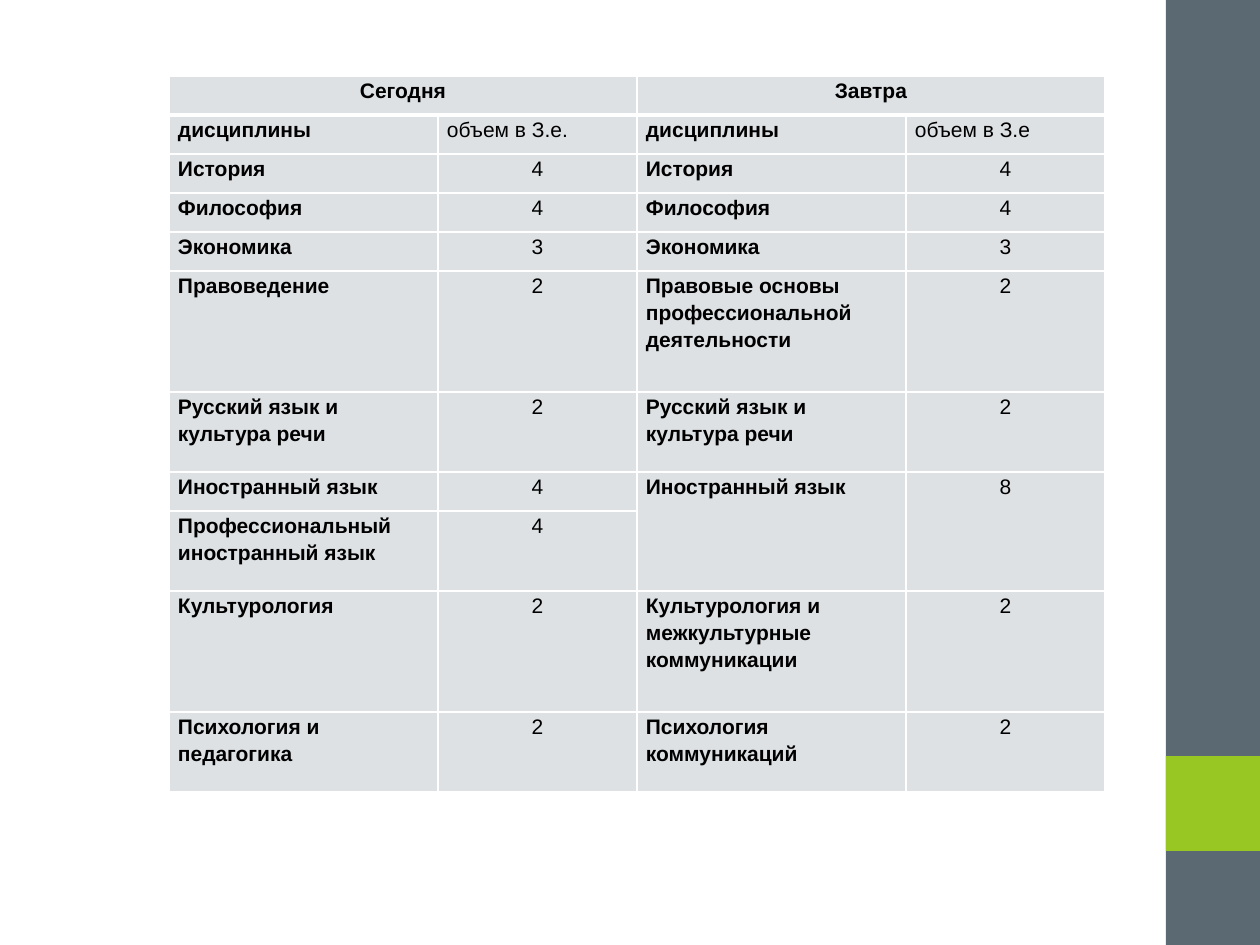
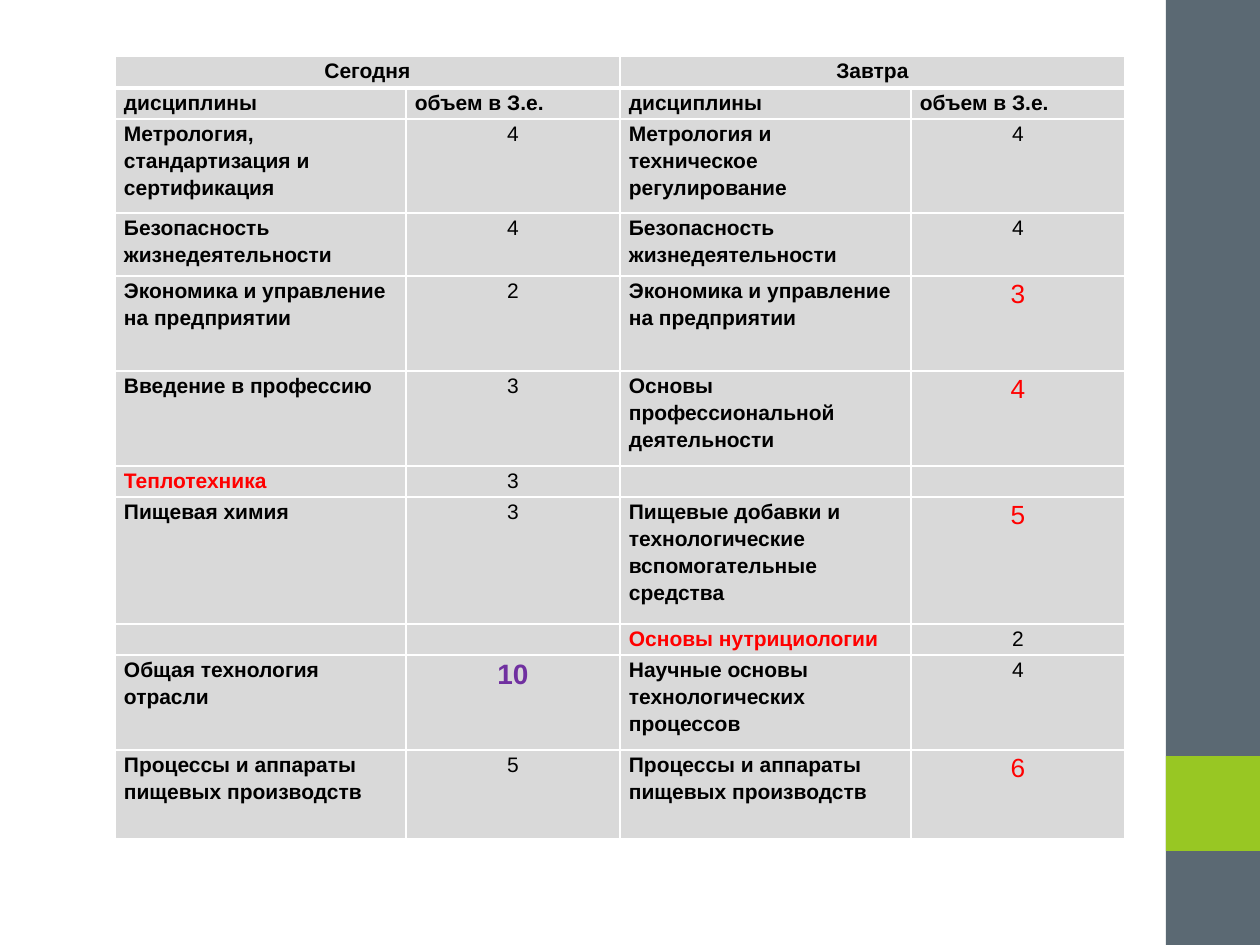
from lxml.etree import SubElement
from pptx import Presentation
from pptx.dml.color import RGBColor
from pptx.enum.shapes import MSO_SHAPE
from pptx.enum.text import PP_ALIGN
from pptx.oxml.ns import qn
from pptx.util import Emu, Pt

PX = 914400 / 126
RECTANGLE = MSO_SHAPE.RECTANGLE
LEFT, CENTER = PP_ALIGN.LEFT, PP_ALIGN.CENTER

THEME = {
    "font": "Arial",
    "line_spacing": 1.15,
    "slate": "5B6973",
    "green": "98C723",
    "border": "FFFFFF",
    "thin": 1,
    "thick": 3,
    "margin": 9,
}
STYLES = {
    "strong": {"size": 12, "bold": True, "color": "000000"},
    "plain": {"size": 12, "bold": False, "color": "000000"},
    "changed name": {"size": 12, "bold": True, "color": "FF0000"},
    "changed volume": {"size": 15, "bold": False, "color": "FF0000"},
    "largest volume": {"size": 16, "bold": True, "color": "7030A0"},
}

SLIDE_SIZE = (1260, 945)
SIDE_BANDS = [("slate", (1166, 0, 94, 945)), ("green", (1166, 756, 94, 95))]
PERIODS = ("Сегодня", None, "Завтра", None)
PERIOD_MERGES = [(0, 0, 0, 1), (0, 2, 0, 3)]

# Each row is (height, cells); a cell is text or (text, style), None is covered by a merge.
CURRICULA = [
    {
        "origin": (169, 76),
        "columns": (269, 199) * 2,
        "fill": "DDE1E4",
        "merges": [(7, 2, 8, 2), (7, 3, 8, 3)],
        "rows": [
            (39, PERIODS),
            (39, ("дисциплины", ("объем в З.е.", "plain"),
                  "дисциплины", ("объем в З.е", "plain"))),
            (39, ("История", "4", "История", "4")),
            (39, ("Философия", "4", "Философия", "4")),
            (39, ("Экономика", "3", "Экономика", "3")),
            (121, ("Правоведение", "2",
                   "Правовые основы профессиональной деятельности", "2")),
            (80, ("Русский язык и культура речи", "2",
                  "Русский язык и культура речи", "2")),
            (39, ("Иностранный язык", "4", "Иностранный язык", "8")),
            (80, ("Профессиональный иностранный язык", "4", None, None)),
            (121, ("Культурология", "2",
                   "Культурология и межкультурные коммуникации", "2")),
            (80, ("Психология и педагогика", "2", "Психология коммуникаций", "2")),
        ],
    },
    {
        "origin": (115, 56),
        "columns": (291, 214) * 2,
        "fill": "D9D9D9",
        "merges": [],
        "rows": [
            (32, PERIODS),
            (31, ("дисциплины", "объем в З.е.") * 2),
            (94, ("Метрология, стандартизация и сертификация", "4",
                  "Метрология и техническое регулирование", "4")),
            (63, ("Безопасность жизнедеятельности", "4") * 2),
            (95, ("Экономика и управление на предприятии", "2",
                  "Экономика и управление на предприятии", ("3", "changed volume"))),
            (95, ("Введение в профессию", "3",
                  "Основы профессиональной деятельности", ("4", "changed volume"))),
            (31, (("Теплотехника", "changed name"), "3", "", "")),
            (127, ("Пищевая химия", "3",
                   "Пищевые добавки и технологические вспомогательные средства",
                   ("5", "changed volume"))),
            (31, ("", "", ("Основы нутрициологии", "changed name"), "2")),
            (95, ("Общая технология отрасли", ("10", "largest volume"),
                  "Научные основы технологических процессов", "4")),
            (89, ("Процессы и аппараты пищевых производств", "5",
                  "Процессы и аппараты пищевых производств", ("6", "changed volume"))),
        ],
    },
]


def px(length):
    return Emu(round(length * PX))


def add_side_bands(slide):
    for color, box in SIDE_BANDS:
        band = slide.shapes.add_shape(RECTANGLE, *map(px, box))
        band.shadow.inherit = False
        band.fill.solid()
        band.fill.fore_color.rgb = RGBColor.from_string(THEME[color])
        band.line.fill.background()


def set_borders(cell, top, bottom):
    """Draw the four cell edges; their elements must precede the fill."""
    properties = cell._tc.get_or_add_tcPr()
    widths = {"L": THEME["thin"], "R": THEME["thin"], "T": top, "B": bottom}
    for position, (side, width) in enumerate(widths.items()):
        edge = SubElement(properties, qn(f"a:ln{side}"), w=str(Pt(width)))
        fill = SubElement(edge, qn("a:solidFill"))
        SubElement(fill, qn("a:srgbClr"), val=THEME["border"])
        properties.insert(position, edge)


def write_cell(cell, content, is_header):
    text, style_name = content if isinstance(content, tuple) else (content, None)
    is_volume = text.isdigit()
    style = STYLES[style_name or ("plain" if is_volume else "strong")]
    paragraph = cell.text_frame.paragraphs[0]
    paragraph.alignment = CENTER if is_header or is_volume else LEFT
    paragraph.line_spacing = THEME["line_spacing"]
    if not text:
        # Keeps an empty cell from stretching its row
        paragraph._p.get_or_add_endParaRPr().set("sz", str(style["size"] * 100))
        return
    run = paragraph.add_run()
    run.text = text
    font_format = {"name": THEME["font"], "size": Pt(style["size"]), "bold": style["bold"]}
    for attribute, value in font_format.items():
        setattr(run.font, attribute, value)
    run.font.color.rgb = RGBColor.from_string(style["color"])


def format_cell(cell, fill, row_index):
    margins = {"margin_left": px(THEME["margin"]), "margin_right": px(THEME["margin"]),
               "margin_top": 0, "margin_bottom": 0}
    for attribute, value in margins.items():
        setattr(cell, attribute, value)
    cell.fill.solid()
    cell.fill.fore_color.rgb = RGBColor.from_string(fill)
    set_borders(cell,
                top=THEME["thick" if row_index == 1 else "thin"],
                bottom=THEME["thick" if row_index == 0 else "thin"])


def add_curriculum(slide, curriculum):
    rows, columns = curriculum["rows"], curriculum["columns"]
    size = (sum(columns), sum(height for height, _ in rows))
    table = slide.shapes.add_table(
        len(rows), len(columns), *map(px, curriculum["origin"] + size)).table
    table.first_row = table.horz_banding = False
    for column, width in zip(table.columns, columns):
        column.width = px(width)
    for row_index, (height, contents) in enumerate(rows):
        table.rows[row_index].height = px(height)
        for column_index, content in enumerate(contents):
            cell = table.cell(row_index, column_index)
            format_cell(cell, curriculum["fill"], row_index)
            if content is not None:
                write_cell(cell, content, is_header=row_index == 0)
    for top, left, bottom, right in PERIOD_MERGES + curriculum["merges"]:
        table.cell(top, left).merge(table.cell(bottom, right))


def main():
    presentation = Presentation()
    presentation.slide_width, presentation.slide_height = map(px, SLIDE_SIZE)
    blank = presentation.slide_layouts[6]
    for curriculum in CURRICULA:
        slide = presentation.slides.add_slide(blank)
        add_side_bands(slide)
        add_curriculum(slide, curriculum)
    presentation.save("out.pptx")


if __name__ == "__main__":
    main()
